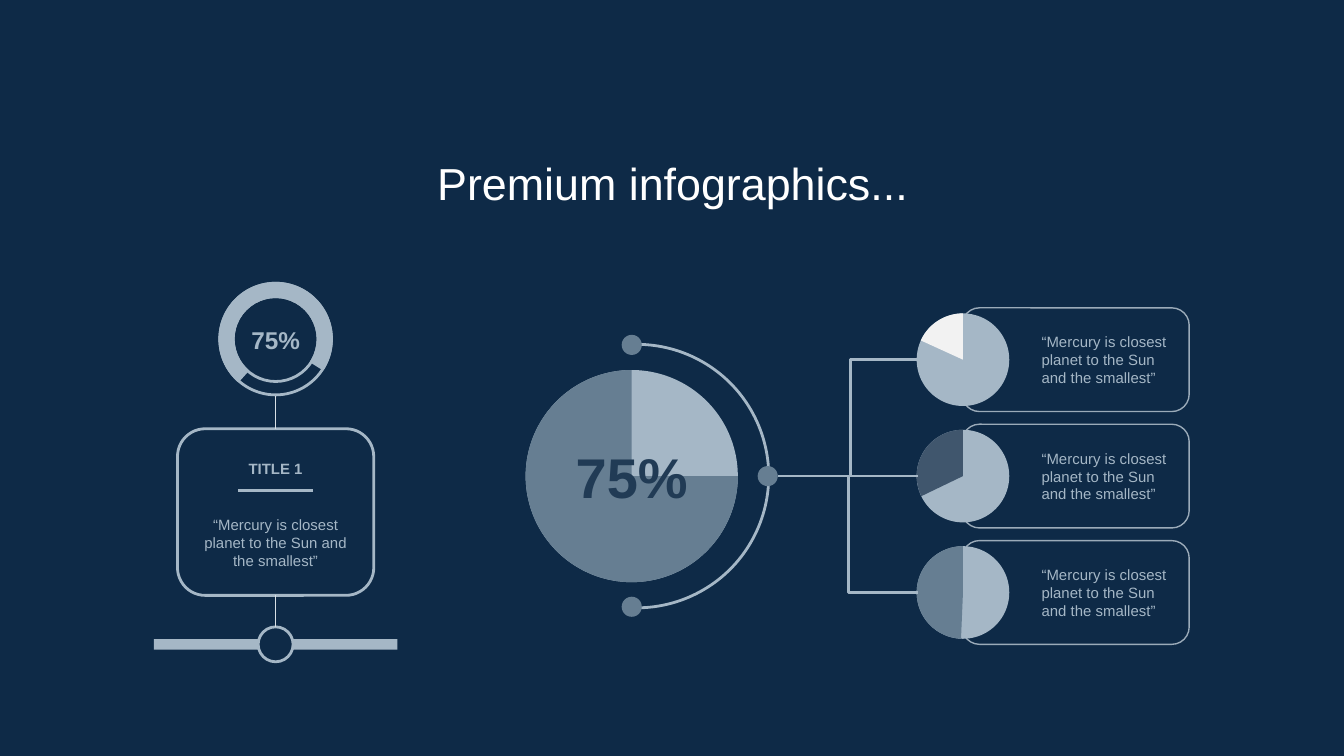
from lxml import etree
from pptx import Presentation
from pptx.dml.color import RGBColor
from pptx.enum.shapes import MSO_CONNECTOR, MSO_SHAPE
from pptx.enum.text import MSO_ANCHOR, MSO_AUTO_SIZE, PP_ALIGN
from pptx.oxml.ns import qn
from pptx.util import Cm, Pt

NAVY = RGBColor(0x0E, 0x2A, 0x47)
MIST = RGBColor(0xA5, 0xB7, 0xC6)
HAZE = RGBColor(0x9B, 0xAB, 0xB9)
PALE = RGBColor(0xD7, 0xDF, 0xE5)
SLATE = RGBColor(0x66, 0x7E, 0x92)
STEEL = RGBColor(0x40, 0x56, 0x6D)
INK = RGBColor(0x21, 0x3B, 0x55)
SNOW = RGBColor(0xF2, 0xF2, 0xF2)
WHITE = RGBColor(0xFF, 0xFF, 0xFF)

ARC, BLOCK_ARC, DONUT = MSO_SHAPE.ARC, MSO_SHAPE.BLOCK_ARC, MSO_SHAPE.DONUT
OVAL, PIE = MSO_SHAPE.OVAL, MSO_SHAPE.PIE
RECTANGLE, ROUNDED = MSO_SHAPE.RECTANGLE, MSO_SHAPE.ROUNDED_RECTANGLE
STRAIGHT, ELBOW = MSO_CONNECTOR.STRAIGHT, MSO_CONNECTOR.ELBOW
TOP, MIDDLE = MSO_ANCHOR.TOP, MSO_ANCHOR.MIDDLE
LEFT, CENTER = PP_ALIGN.LEFT, PP_ALIGN.CENTER
NO_AUTOFIT = MSO_AUTO_SIZE.NONE

QUOTE = "“Mercury is closest planet to the Sun and the smallest”"
PIE_TOP = 162


def set_attributes(target, values):
    for name, value in values.items():
        setattr(target, name, value)


class InfographicSlide:
    font_name = "Arial"
    inset = 0.25

    def __init__(self, presentation):
        self.slide = presentation.slides.add_slide(presentation.slide_layouts[5])
        self.shapes = self.slide.shapes
        fill = self.slide.background.fill
        fill.solid()
        fill.fore_color.rgb = NAVY

    def format_text(self, shape, text, size, color, bold=False, align=CENTER,
                    anchor=MIDDLE, top_inset=inset):
        frame = shape.text_frame
        set_attributes(frame, {
            "word_wrap": True,
            "auto_size": NO_AUTOFIT,
            "vertical_anchor": anchor,
            "margin_left": Cm(self.inset),
            "margin_right": Cm(self.inset),
            "margin_top": Cm(top_inset),
            "margin_bottom": Cm(self.inset),
        })
        paragraph = frame.paragraphs[0]
        paragraph.alignment = align
        run = paragraph.add_run()
        run.text = text
        set_attributes(run.font, {"name": self.font_name, "size": Pt(size), "bold": bold})
        run.font.color.rgb = color

    def title(self, text, left, top, width, height):
        title = self.shapes.title
        set_attributes(title, {"left": Cm(left), "top": Cm(top),
                               "width": Cm(width), "height": Cm(height)})
        self.format_text(title, text, 24, WHITE, anchor=TOP, top_inset=0.35)

    def text(self, text, x, y, width, height, size=8, color=MIST, **style):
        box = self.shapes.add_textbox(Cm(x - width / 2), Cm(y - height / 2),
                                      Cm(width), Cm(height))
        self.format_text(box, text, size, color, **style)

    def shape(self, kind, x, y, width, height, fill=None, line=None, weight=1.5,
              adjustments=()):
        shape = self.shapes.add_shape(kind, Cm(x - width / 2), Cm(y - height / 2),
                                      Cm(width), Cm(height))
        shape.shadow.inherit = False
        for index, value in enumerate(adjustments):
            shape.adjustments[index] = value
        if fill is None:
            shape.fill.background()
        else:
            shape.fill.solid()
            shape.fill.fore_color.rgb = fill
        if line is None:
            shape.line.fill.background()
        else:
            shape.line.color.rgb = line
            shape.line.width = Pt(weight)

    def pie(self, x, y, size, color, start, end):
        self.shape(OVAL, x, y, size, size, fill=MIST)
        self.shape(PIE, x, y, size, size, fill=color, adjustments=(start, end))

    def connector(self, start, end, color=MIST, weight=1.5, kind=STRAIGHT, bend=None):
        connector = self.shapes.add_connector(kind, *map(Cm, start + end))
        connector.line.color.rgb = color
        connector.line.width = Pt(weight)
        properties = connector._element.spPr
        etree.SubElement(properties, qn("a:effectLst"))
        if bend is not None:
            guides = properties.find(qn("a:prstGeom")).find(qn("a:avLst"))
            etree.SubElement(guides, qn("a:gd"), name="adj1", fmla=f"val {bend}")


def draw_timeline_card(canvas):
    x = 5.21
    canvas.shape(RECTANGLE, x, 12.18, 4.6, 0.2, fill=MIST)
    canvas.shape(DONUT, x, 6.41, 2.11, 2.11, line=MIST, adjustments=(0.12,))
    canvas.shape(BLOCK_ARC, x, 6.41, 2.11, 2.11, fill=MIST, line=MIST,
                 adjustments=(79.14, 19.26, 0.12))
    canvas.shape(ROUNDED, x, 9.68, 3.71, 3.15, line=MIST)
    canvas.shape(OVAL, x, 12.18, 0.66, 0.66, fill=NAVY, line=MIST)
    for top, bottom in ((7.49, 8.1), (11.25, 11.86)):
        canvas.connector((x, top), (x, bottom), color=PALE, weight=0.75)
    canvas.text(QUOTE, x, 10.26, 3.23, 1.27)
    canvas.connector((4.5, 9.27), (5.92, 9.27))
    canvas.text("TITLE 1", x, 8.86, 2.34, 0.61, bold=True)
    canvas.text("75%", x, 6.43, 1.6, 1.02, size=13, bold=True)


def draw_pie_tree(canvas):
    x, y = 11.94, 9
    canvas.shape(ARC, 12.04, y, 4.98, 4.98, line=MIST, adjustments=(PIE_TOP, 52.98))
    canvas.pie(x, y, 4.01, SLATE, 0, PIE_TOP)
    for dot_x, dot_y in ((x, 6.52), (x, 11.47), (14.51, y)):
        canvas.shape(OVAL, dot_x, dot_y, 0.38, 0.38, fill=SLATE)
    branches = ((SNOW, 122.72, 51500), (STEEL, 92.53, 50000), (SLATE, 55.44, 50000))
    for row, (color, start, bend) in enumerate(branches):
        row_y = 6.8 + 2.2 * row
        canvas.shape(ROUNDED, 20.33, row_y, 4.29, 1.96, line=HAZE, weight=0.75)
        canvas.pie(18.2, row_y, 1.75, color, start, PIE_TOP)
        canvas.text(QUOTE, 21.01, row_y, 3.15, 1.22, align=LEFT)
        canvas.connector((14.71, y), (17.35, row_y), kind=ELBOW, bend=bend)
    canvas.text("75%", x, y, 2.77, 1.75, size=30, color=INK, bold=True)


def main():
    presentation = Presentation()
    presentation.slide_width = Cm(25.4)
    presentation.slide_height = Cm(14.29)
    canvas = InfographicSlide(presentation)
    canvas.title("Premium infographics...", 2.92, 2.59, 19.58, 1.35)
    draw_timeline_card(canvas)
    draw_pie_tree(canvas)
    presentation.save("out.pptx")


if __name__ == "__main__":
    main()
